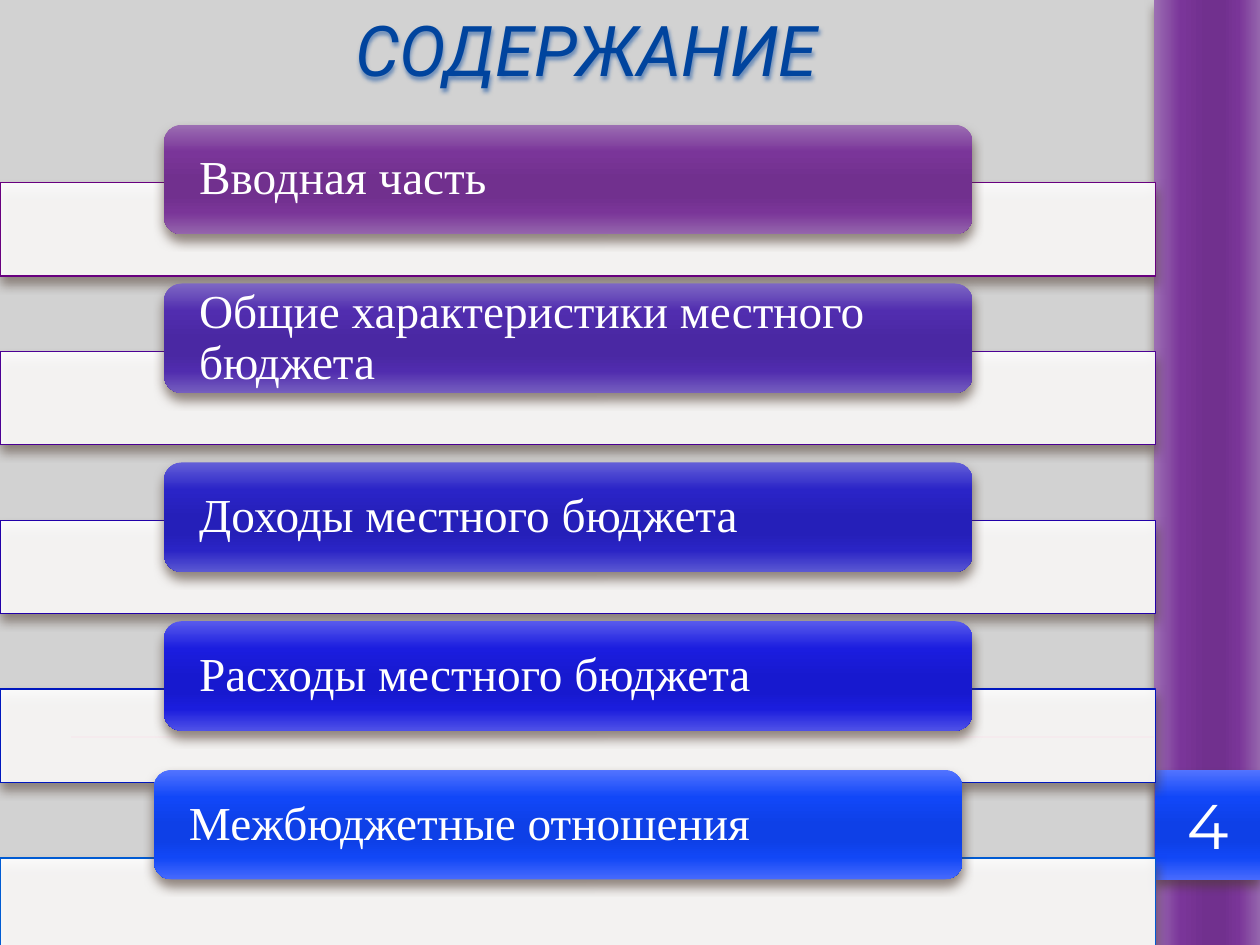
import dataclasses

import pptx
import pptx.dml.color
import pptx.enum.dml
import pptx.enum.shapes
import pptx.enum.text
import pptx.oxml
import pptx.oxml.ns
import pptx.util

Inches = pptx.util.Inches
qn = pptx.oxml.ns.qn


@dataclasses.dataclass(frozen=True)
class Theme:
    background: str = "D2D2D2"
    white: str = "FFFFFF"
    title: str = "00449E"
    title_outline: str = "4E005F"
    rule: str = "FF388C"
    shadow: str = "4E3B30"
    title_size: int = 40
    number_size: int = 36
    item_size: int = 27
    title_font: str = "Roboto"
    number_font: str = "Montserrat"
    item_font: str = "Times New Roman"
    stops: tuple = (0, 25, 50, 65, 80, 100)
    purple: tuple = ("9C6FB3", "7A3599", "71308E", "71308E", "7A3598", "9566AD")
    violet: tuple = ("7E68C4", "512DAF", "4A28A3", "4A28A3", "502CAE", "765FBF")
    indigo: tuple = ("6460D8", "2A24C7", "251FB9", "251FB9", "2A24C5", "5B58D2")
    royal: tuple = ("585AEC", "1B1DDF", "1719CF", "1719CF", "1B1DDD", "4F51E7")
    blue: tuple = ("5374FF", "1147F8", "0E40E7", "0E40E7", "1147F6", "476AFD")


THEME = Theme()
SHAPES = pptx.enum.shapes.MSO_SHAPE

# Text, card left, card top, card gradient, band outline
ITEMS = [
    ("Вводная часть", 1.3, 0.99, THEME.purple, "68007F"),
    ("Общие характеристики местного бюджета", 1.3, 2.25, THEME.violet, "4B0094"),
    ("Доходы местного бюджета", 1.3, 3.67, THEME.indigo, "2100A9"),
    ("Расходы местного бюджета", 1.3, 4.93, THEME.royal, "0017BE"),
    ("Межбюджетные отношения", 1.22, 6.11, THEME.blue, "005BD3"),
]
BAND_TOP, BAND_STEP = 1.45, 1.34


def rgb(color):
    return pptx.dml.color.RGBColor.from_string(color)


def xml(tag, attributes="", content=""):
    namespace = pptx.oxml.ns.nsdecls("a")
    return pptx.oxml.parse_xml(f"<a:{tag} {namespace} {attributes}>{content}</a:{tag}>")


def add_shadow(shape, color, alpha, blur, distance):
    shape.shadow.inherit = False
    effects = shape._element.spPr.find(qn("a:effectLst"))
    effects.append(xml(
        "outerShdw",
        f'blurRad="{pptx.util.Pt(blur)}" dist="{pptx.util.Pt(distance)}"'
        ' dir="5400000" rotWithShape="0"',
        f'<a:srgbClr val="{color}"><a:alpha val="{alpha * 1000}"/></a:srgbClr>'))


def add_block(slide, kind, left, top, width, height):
    shape = slide.shapes.add_shape(
        kind, Inches(left), Inches(top), Inches(width), Inches(height))
    add_shadow(shape, THEME.shadow, 60, 6, 4)
    return shape


def add_gradient_block(slide, kind, box, colors):
    shape = add_block(slide, kind, *box)
    shape.line.fill.background()
    shape.fill.gradient()
    shape.fill.gradient_angle = 270
    stops = shape._element.spPr.find(".//" + qn("a:gsLst"))
    for stop in list(stops):
        stops.remove(stop)
    for position, color in zip(THEME.stops, colors):
        stops.append(xml("gs", f'pos="{position * 1000}"', f'<a:srgbClr val="{color}"/>'))
    return shape


def add_band(slide, top, outline):
    band = add_block(slide, SHAPES.RECTANGLE, 0, top, 9.17, 0.74)
    band.fill.solid()
    band.fill.fore_color.rgb = rgb(THEME.white)
    fill_color = band._element.spPr.find(qn("a:solidFill")).find(qn("a:srgbClr"))
    fill_color.append(xml("alpha", 'val="90000"'))
    band.line.color.rgb = rgb(outline)
    band.line.width = pptx.util.Pt(0.79)


def write_text(shape, text, font, size, color, frame_format, paragraph_format, italic=None):
    frame = shape.text_frame
    for name, value in frame_format.items():
        setattr(frame, name, value)
    paragraph = frame.paragraphs[0]
    for name, value in paragraph_format.items():
        setattr(paragraph, name, value)
    run = paragraph.add_run()
    run.text = text
    font_format = {"name": font, "size": pptx.util.Pt(size), "italic": italic}
    for name, value in font_format.items():
        setattr(run.font, name, value)
    run.font.color.rgb = rgb(color)
    return run


def add_text_box(slide, left, top, width, height):
    return slide.shapes.add_textbox(
        Inches(left), Inches(top), Inches(width), Inches(height))


def add_item(slide, text, left, top, colors):
    add_gradient_block(slide, SHAPES.ROUNDED_RECTANGLE, (left, top, 6.42, 0.87), colors)
    label = add_text_box(slide, left + 0.04, top + 0.04, 6.34, 0.79)
    frame_format = {
        "word_wrap": True,
        "vertical_anchor": pptx.enum.text.MSO_ANCHOR.MIDDLE,
        "margin_left": Inches(0.24), "margin_right": Inches(0.24),
        "margin_top": 0, "margin_bottom": 0,
    }
    write_text(label, text, THEME.item_font, THEME.item_size, THEME.white,
               frame_format, {"line_spacing": 0.9})


def add_rule(slide):
    rule = slide.shapes.add_connector(
        pptx.enum.shapes.MSO_CONNECTOR.STRAIGHT,
        Inches(0.56), Inches(5.85), Inches(10), Inches(5.85))
    rule.line.color.rgb = rgb(THEME.rule)
    rule.line.width = pptx.util.Pt(0.75)
    rule._element.spPr.append(xml("effectLst"))


def add_page_number(slide):
    box = add_gradient_block(slide, SHAPES.RECTANGLE, (9.17, 6.11, 0.83, 0.87), THEME.blue)
    write_text(box, "4", THEME.number_font, THEME.number_size, THEME.white,
               {"vertical_anchor": pptx.enum.text.MSO_ANCHOR.MIDDLE},
               {"alignment": pptx.enum.text.PP_ALIGN.CENTER})


def add_title(slide):
    title = add_text_box(slide, 2.72, 0, 3.94, 0.77)
    run = write_text(title, "СОДЕРЖАНИЕ", THEME.title_font, THEME.title_size, THEME.title,
                     {"word_wrap": False,
                      "auto_size": pptx.enum.text.MSO_AUTO_SIZE.SHAPE_TO_FIT_TEXT},
                     {}, italic=True)
    outline = f'<a:solidFill><a:srgbClr val="{THEME.title_outline}"/></a:solidFill>'
    run._r.get_or_add_rPr().insert(0, xml("ln", f'w="{pptx.util.Pt(0.75)}"', outline))
    add_shadow(title, THEME.title, 50, 2, 2)


def main():
    presentation = pptx.Presentation()
    presentation.slide_width = Inches(10)
    presentation.slide_height = Inches(7.5)
    slide = presentation.slides.add_slide(presentation.slide_layouts[6])
    slide.background.fill.solid()
    slide.background.fill.fore_color.rgb = rgb(THEME.background)

    # Side bar and page number
    add_rule(slide)
    bar = add_gradient_block(slide, SHAPES.RECTANGLE, (5.83, 3.33, 7.5, 0.84), THEME.purple)
    bar.rotation = 270
    add_page_number(slide)

    # Contents list
    for index, (text, left, top, colors, outline) in enumerate(ITEMS):
        add_band(slide, BAND_TOP + index * BAND_STEP, outline)
        add_item(slide, text, left, top, colors)

    add_title(slide)
    presentation.save("out.pptx")


if __name__ == "__main__":
    main()
